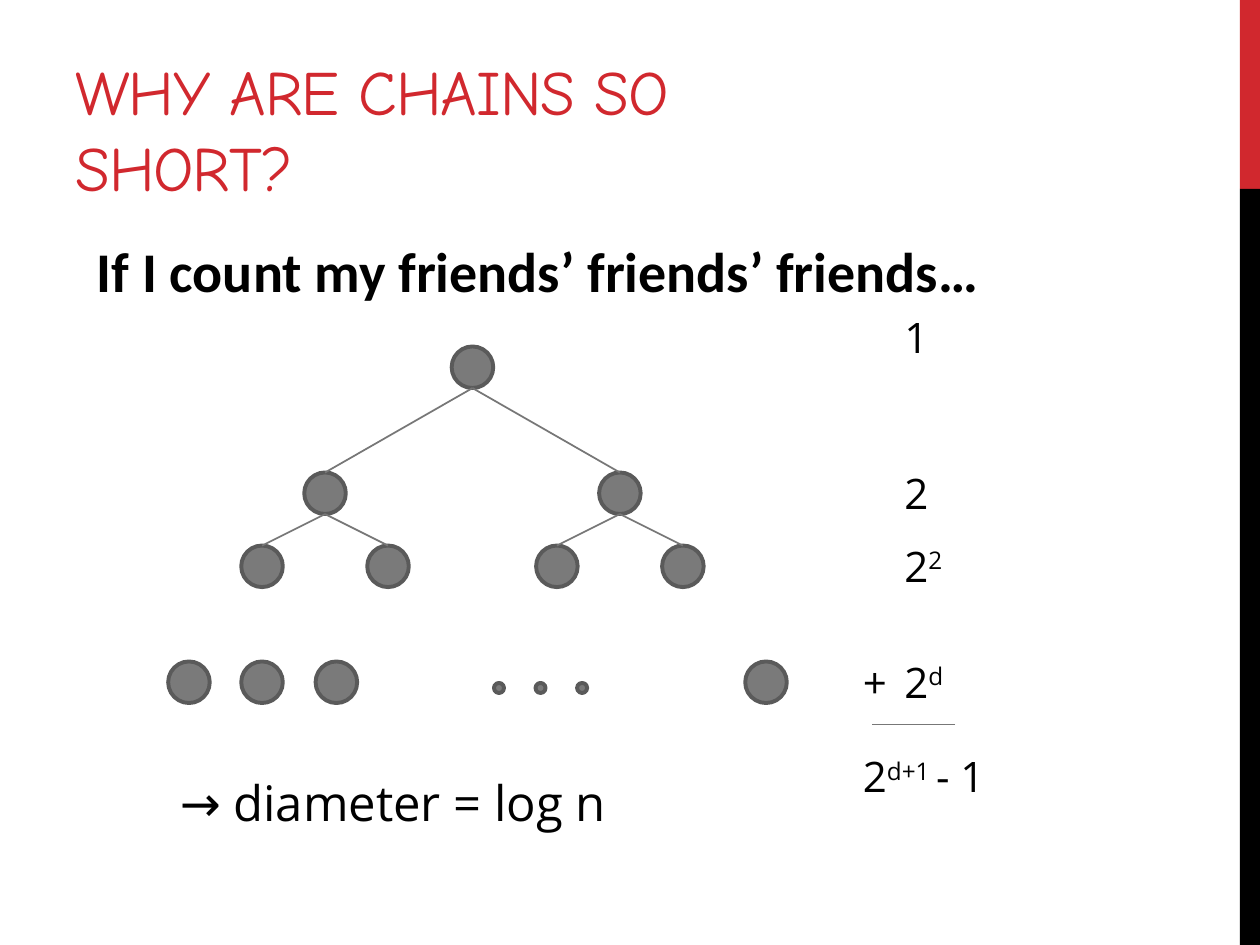
from pptx import Presentation
from pptx.dml.color import RGBColor
from pptx.enum.shapes import MSO_CONNECTOR, MSO_SHAPE
from pptx.enum.text import MSO_ANCHOR
from pptx.util import Inches, Pt
from lxml import etree

OVAL, RECTANGLE = MSO_SHAPE.OVAL, MSO_SHAPE.RECTANGLE
STRAIGHT = MSO_CONNECTOR.STRAIGHT
TOP, BOTTOM = MSO_ANCHOR.TOP, MSO_ANCHOR.BOTTOM
DRAWING_NS = "http://schemas.openxmlformats.org/drawingml/2006/main"

RED, BLACK = "D1282E", "000000"
NODE_FILL, NODE_EDGE, LINK = "7A7A7A", "5A5A5A", "777777"

TITLE = "WHY ARE CHAINS SO SHORT?"
LEAD = "If I count my friends’ friends’ friends…"
CONCLUSION = "→ diameter = log n"

SIDE_BANDS = [(0, 1.5, RED), (1.5, 6, BLACK)]
COUNTS = [
    (7.08, 2.42, 0.58, [("1", False)]),
    (7.08, 3.66, 0.58, [("2", False)]),
    (7.08, 4.24, 0.58, [("2", False), ("2", True)]),
    (7.08, 5.16, 0.58, [("2", False), ("d", True)]),
    (6.75, 5.16, 0.5, [("+", False)]),
    (6.75, 5.91, 1.75, [("2", False), ("d+1 ", True), ("- 1", False)]),
]

NODE_SIZE, DOT_SIZE = 0.33, 0.08
ROOT_X = 3.75
LEVEL_TOPS = [2.75, 3.75, 4.33]
BRANCH_OFFSETS = [1.17, 0.5]
LAST_ROW_CENTERS, LAST_ROW_TOP = [1.5, 2.08, 2.67, 6.08], 5.25
DOT_CENTERS, DOT_TOP = [3.96, 4.29, 4.62], 5.42

prs = Presentation()
prs.slide_width, prs.slide_height = Inches(10), Inches(7.5)
slide = prs.slides.add_slide(prs.slide_layouts[6])


def color(hex_value):
    return RGBColor.from_string(hex_value)


def add_filled(kind, left, top, width, height, fill, edge=None):
    shape = slide.shapes.add_shape(
        kind, Inches(left), Inches(top), Inches(width), Inches(height))
    shape.shadow.inherit = False
    shape.fill.solid()
    shape.fill.fore_color.rgb = color(fill)
    if edge:
        shape.line.color.rgb = color(edge)
        shape.line.width = Pt(2.25)
    else:
        shape.line.fill.background()
    return shape


def add_circle(center_x, top, size=NODE_SIZE):
    return add_filled(OVAL, center_x - size / 2, top, size, size, NODE_FILL, NODE_EDGE)


def add_line(x1, y1, x2, y2):
    line = slide.shapes.add_connector(
        STRAIGHT, Inches(x1), Inches(y1), Inches(x2), Inches(y2))
    line.line.color.rgb = color(LINK)
    line.line.width = Pt(1)
    etree.SubElement(line._element.spPr, f"{{{DRAWING_NS}}}effectLst")
    return line


def add_text(left, top, width, height, pieces, size, font,
             fill=BLACK, bold=False, anchor=TOP, spacing=None):
    frame = slide.shapes.add_textbox(
        Inches(left), Inches(top), Inches(width), Inches(height)).text_frame
    frame.word_wrap = True
    frame.vertical_anchor = anchor
    paragraph = frame.paragraphs[0]
    paragraph.font.name = font
    paragraph.font.size = Pt(size)
    paragraph.font.bold = bold
    paragraph.font.color.rgb = color(fill)
    for text, raised in pieces:
        run = paragraph.add_run()
        run.text = text
        if raised:
            run._r.get_or_add_rPr().set("baseline", "30000")
        if spacing is not None:
            run._r.get_or_add_rPr().set("spc", str(spacing))


for top, height, fill in SIDE_BANDS:
    add_filled(RECTANGLE, 9.84, top, 0.16, height, fill)

add_text(0.5, 0.17, 6.33, 1.5, [(TITLE, False)], 36, "Comic Neue",
         RED, anchor=BOTTOM, spacing=-60)
add_text(0.67, 1.83, 9.25, 0.7, [(LEAD, False)], 32, "Calibri", bold=True)

levels = [[ROOT_X]]
for offset in BRANCH_OFFSETS:
    levels.append([x + side * offset for x in levels[-1] for side in (-1, 1)])
nodes = [[add_circle(x, top) for x in centers]
         for centers, top in zip(levels, LEVEL_TOPS)]

for depth, parents in enumerate(levels[:-1]):
    for index, parent_x in enumerate(parents):
        for child in (2 * index, 2 * index + 1):
            link = add_line(parent_x, LEVEL_TOPS[depth] + NODE_SIZE,
                            levels[depth + 1][child], LEVEL_TOPS[depth + 1])
            link.end_connect(nodes[depth + 1][child], 0)

for x in LAST_ROW_CENTERS:
    add_circle(x, LAST_ROW_TOP)
for x in DOT_CENTERS:
    add_circle(x, DOT_TOP, DOT_SIZE)

for left, top, width, pieces in COUNTS:
    add_text(left, top, width, 0.51, pieces, 24, "Open Sans")
add_line(7.58, 5.75, 6.92, 5.75)
add_text(1.33, 6.08, 4, 1.04, [(CONCLUSION, False)], 28, "Open Sans")

prs.save("out.pptx")
